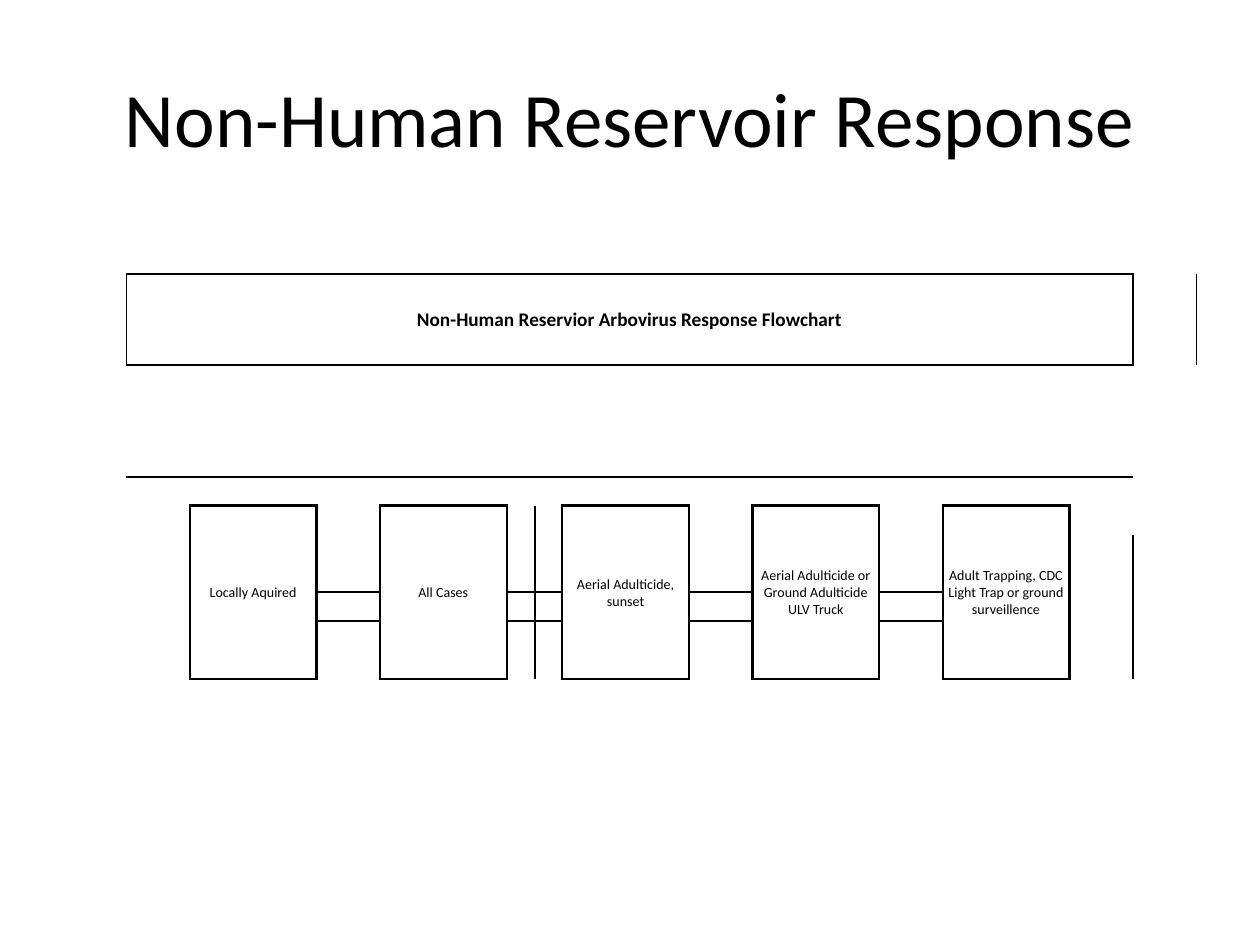
import collections
import dataclasses

import lxml.etree
import pptx
import pptx.dml.color
import pptx.enum.text
import pptx.oxml.ns
import pptx.util

Pt = pptx.util.Pt
qn = pptx.oxml.ns.qn


@dataclasses.dataclass(frozen=True)
class Theme:
    font: str = "Calibri"
    ink: str = "000000"
    title_size: float = 44
    banner_size: float = 11
    step_size: float = 8
    banner_line: float = 1
    step_line: float = 1.5


THEME = Theme()
NO_STYLE = "{2D5ABB26-0587-4C30-8999-92F81FD0307C}"
COLUMNS = [36.25] * 7 + [16, 15.75] + [36.25] * 10
ROWS = [36.5, 52, 64] + [16.5] * 8
BANNER = (1, 1, 1, 17)
STEP_TOP, STEP_BOTTOM = 4, 9
STEPS = {
    2: "Locally Aquired",
    5: "All Cases",
    9: "Aerial Adulticide, sunset",
    12: "Aerial Adulticide or Ground Adulticide ULV Truck",
    15: "Adult Trapping, CDC Light Trap or ground surveillence",
}


def write_text(frame, text, size, bold=False):
    frame.word_wrap = True
    para = frame.paragraphs[0]
    para.alignment = pptx.enum.text.PP_ALIGN.CENTER
    para.text = text
    para.font.name = THEME.font
    para.font.size = Pt(size)
    para.font.bold = bold
    para.font.color.rgb = pptx.dml.color.RGBColor.from_string(THEME.ink)


def add_title(page, text):
    box = page.shapes.add_textbox(Pt(36), Pt(21.6), Pt(648), Pt(90))
    box.text_frame.vertical_anchor = pptx.enum.text.MSO_ANCHOR.MIDDLE
    write_text(box.text_frame, text, THEME.title_size)


def add_grid(page):
    """Add an unstyled table whose empty cells do not stretch the rows."""
    frame = page.shapes.add_table(len(ROWS), len(COLUMNS), Pt(36), Pt(120),
                                  Pt(sum(COLUMNS)), Pt(sum(ROWS)))
    table = frame.table
    table.first_row = table.horz_banding = False
    table._tbl.tblPr.find(qn("a:tableStyleId")).text = NO_STYLE
    for column, width in zip(table.columns, COLUMNS):
        column.width = Pt(width)
    for row, height in zip(table.rows, ROWS):
        row.height = Pt(height)
    for cell in table.iter_cells():
        cell.margin_left = cell.margin_right = cell.margin_top = Pt(0.7)
        cell.margin_bottom = 0
        cell.vertical_anchor = pptx.enum.text.MSO_ANCHOR.MIDDLE
        end = cell.text_frame.paragraphs[0]._p.get_or_add_endParaRPr()
        end.set("sz", str(int(THEME.step_size * 100)))
    return table


def rule_below(borders, row, columns, width):
    for column in columns:
        borders[row, column]["B"] = width
        borders[row + 1, column]["T"] = width


def rule_right(borders, rows, column, width):
    for row in rows:
        borders[row, column]["R"] = width
        borders[row, column + 1]["L"] = width


def add_block(table, borders, area, text, size, width, bold=False):
    """Merge an area into one outlined cell with text."""
    top, left, bottom, right = area
    cell = table.cell(top, left)
    cell.merge(table.cell(bottom, right))
    write_text(cell.text_frame, text, size, bold)
    for row in (top - 1, bottom):
        rule_below(borders, row, range(left, right + 1), width)
    for column in (left - 1, right):
        rule_right(borders, range(top, bottom + 1), column, width)


def draw_borders(table, borders):
    for (row, column), sides in borders.items():
        properties = table.cell(row, column)._tc.get_or_add_tcPr()
        for side in "LRTB":
            if side in sides:
                line = lxml.etree.SubElement(properties, qn("a:ln" + side),
                                             w=str(Pt(sides[side])))
                fill = lxml.etree.SubElement(line, qn("a:solidFill"))
                lxml.etree.SubElement(fill, qn("a:srgbClr"), val=THEME.ink)
    for cell in table.iter_cells():
        cell.fill.background()


def add_flowchart(page):
    table = add_grid(page)
    borders = collections.defaultdict(dict)
    add_block(table, borders, BANNER,
              "Non-Human Reservior Arbovirus Response Flowchart",
              THEME.banner_size, THEME.banner_line, bold=True)
    for left, text in STEPS.items():
        add_block(table, borders, (STEP_TOP, left, STEP_BOTTOM, left + 1),
                  text, THEME.step_size, THEME.step_line)
    starts = list(STEPS)
    middle = (STEP_TOP + STEP_BOTTOM) // 2
    for left, following in zip(starts, starts[1:]):
        rule_below(borders, middle, range(left + 2, following),
                   THEME.step_line)
    draw_borders(table, borders)


def main():
    deck = pptx.Presentation()
    deck.slide_width, deck.slide_height = Pt(720), Pt(540)
    page = deck.slides.add_slide(deck.slide_layouts[6])
    add_title(page, "Non-Human Reservoir Response")
    add_flowchart(page)
    deck.save("out.pptx")


if __name__ == "__main__":
    main()
